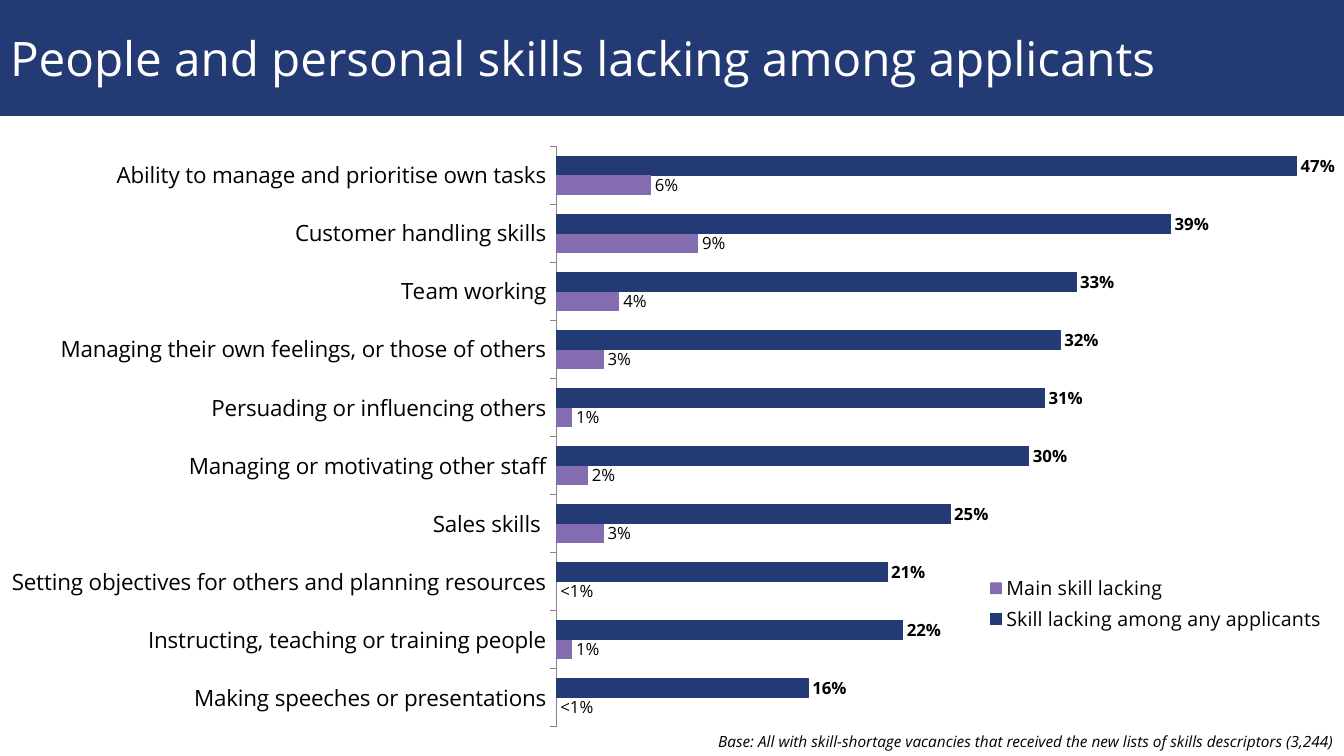
from lxml import etree
from pptx import Presentation
from pptx import util as u
from pptx.chart.data import CategoryChartData
from pptx.dml.color import RGBColor
from pptx.enum import chart as ch, text

FONT = "Open Sans"
NAVY, PURPLE, GREY, BLACK, WHITE = "233A75", "836DB0", "868686", "000000", "FFFFFF"
C = "http://schemas.openxmlformats.org/drawingml/2006/chart"

SKILLS = [
    ("Ability to manage and prioritise own tasks", 0.47, 0.06),
    ("Customer handling skills", 0.39, 0.09),
    ("Team working", 0.33, 0.04),
    ("Managing their own feelings, or those of others", 0.32, 0.03),
    ("Persuading or influencing others", 0.31, 0.01),
    ("Managing or motivating other staff", 0.30, 0.02),
    ("Sales skills ", 0.25, 0.03),
    ("Setting objectives for others and planning resources", 0.21, 0),
    ("Instructing, teaching or training people", 0.22, 0.01),
    ("Making speeches or presentations", 0.16, 0),
]


def rgb(value):
    return RGBColor.from_string(value)


def style_font(font, size, color=BLACK, bold=False, italic=False):
    font.name, font.size = FONT, u.Pt(size)
    font.bold, font.italic = bold, italic
    font.color.rgb = rgb(color)


def place(s, box):
    s.left, s.top, s.width, s.height = (u.Inches(v) for v in box)


def set_layout(parent, after, x, y, w, h, inner=False):
    for old in parent.findall(f"{{{C}}}layout"):
        parent.remove(old)
    layout = etree.Element(f"{{{C}}}layout")
    manual = etree.SubElement(layout, f"{{{C}}}manualLayout")
    settings = [("layoutTarget", "inner")] if inner else []
    settings += [("xMode", "edge"), ("yMode", "edge"), ("x", x), ("y", y), ("w", w), ("h", h)]
    for tag, val in settings:
        etree.SubElement(manual, f"{{{C}}}{tag}").set("val", str(val))
    if after is None:
        parent.insert(0, layout)
    else:
        after.addnext(layout)


def add_title(slide, box):
    s = slide.shapes.title
    place(s, box)
    s.fill.solid()
    s.fill.fore_color.rgb = rgb(NAVY)
    tf = s.text_frame
    tf.text = "People and personal skills lacking among applicants"
    tf.vertical_anchor = text.MSO_ANCHOR.MIDDLE
    p = tf.paragraphs[0]
    p.alignment = text.PP_ALIGN.LEFT
    style_font(p.font, 34, WHITE)


def style_series(series, color, bold):
    series.format.fill.solid()
    series.format.fill.fore_color.rgb = rgb(color)
    series.invert_if_negative = False
    labels = series.data_labels
    labels.show_value = True
    labels.number_format, labels.number_format_is_linked = "0%", False
    labels.position = ch.XL_LABEL_POSITION.OUTSIDE_END
    style_font(labels.font, 12, bold=bold)
    for i, value in enumerate(series.values):
        if value == 0:
            label = series.points[i].data_label
            label.text_frame.text = "<1%"
            style_font(label.text_frame.paragraphs[0].font, 12)
            label.position = ch.XL_LABEL_POSITION.OUTSIDE_END


def style_axes(chart):
    skills = chart.category_axis
    skills.reverse_order = True
    skills.major_tick_mark = ch.XL_TICK_MARK.OUTSIDE
    skills.format.line.color.rgb = rgb(GREY)
    style_font(skills.tick_labels.font, 16)
    share = chart.value_axis
    share.minimum_scale, share.maximum_scale = 0, 0.5
    share.has_major_gridlines = False
    share.tick_labels.number_format = "0%"
    share.tick_labels.number_format_is_linked = False
    share.visible = False


def add_skills_chart(slide, box):
    names, any_lacking, main_lacking = zip(*SKILLS)
    data = CategoryChartData(number_format="0%")
    data.categories = names
    data.add_series("Skill lacking among any applicants", any_lacking)
    data.add_series("Main skill lacking ", main_lacking)
    frame = slide.shapes.add_chart(
        ch.XL_CHART_TYPE.BAR_CLUSTERED, *(u.Inches(v) for v in box), data)
    slide.shapes.element.insert(2, frame.element)
    chart = frame.chart
    chart.has_title = False
    style_font(chart.font, 18)
    style_axes(chart)
    plot = chart.plots[0]
    plot.gap_width, plot.overlap = 100, 0
    plot.vary_by_categories = False
    any_series, main_series = plot.series
    style_series(any_series, NAVY, True)
    any_series.format.line.color.rgb = rgb(NAVY)
    any_series.format.line.width = u.Pt(0.75)
    style_series(main_series, PURPLE, False)

    chart.has_legend = True
    legend = chart.legend
    legend.position = ch.XL_LEGEND_POSITION.RIGHT
    legend.include_in_layout = True
    style_font(legend.font, 14)
    area = chart.element.find(f".//{{{C}}}plotArea")
    set_layout(area, None, 0.414, 0.159, 0.586, 0.801, inner=True)
    key = chart.element.find(f".//{{{C}}}legend")
    set_layout(key, key.find(f"{{{C}}}legendPos"), 0.73, 0.745, 0.26, 0.09)


def add_base_note(slide, box):
    s = slide.shapes.add_textbox(*(u.Inches(v) for v in box))
    tf = s.text_frame
    tf.word_wrap = True
    tf.auto_size = text.MSO_AUTO_SIZE.SHAPE_TO_FIT_TEXT
    p = tf.paragraphs[0]
    p.text = ("Base: All with skill-shortage vacancies that received "
              "the new lists of skills descriptors (3,244)")
    p.alignment = text.PP_ALIGN.RIGHT
    style_font(p.font, 11, italic=True)


def main():
    prs = Presentation()
    prs.slide_width, prs.slide_height = u.Inches(13.33), u.Inches(7.5)
    slide = prs.slides.add_slide(prs.slide_layouts.get_by_name("Title Only"))
    add_title(slide, (0, 0, 13.33, 1.15))
    add_skills_chart(slide, (0, 0.31, 13.33, 7.19))
    add_base_note(slide, (5.31, 7.21, 8.02, 0.29))
    prs.save("out.pptx")


if __name__ == "__main__":
    main()
